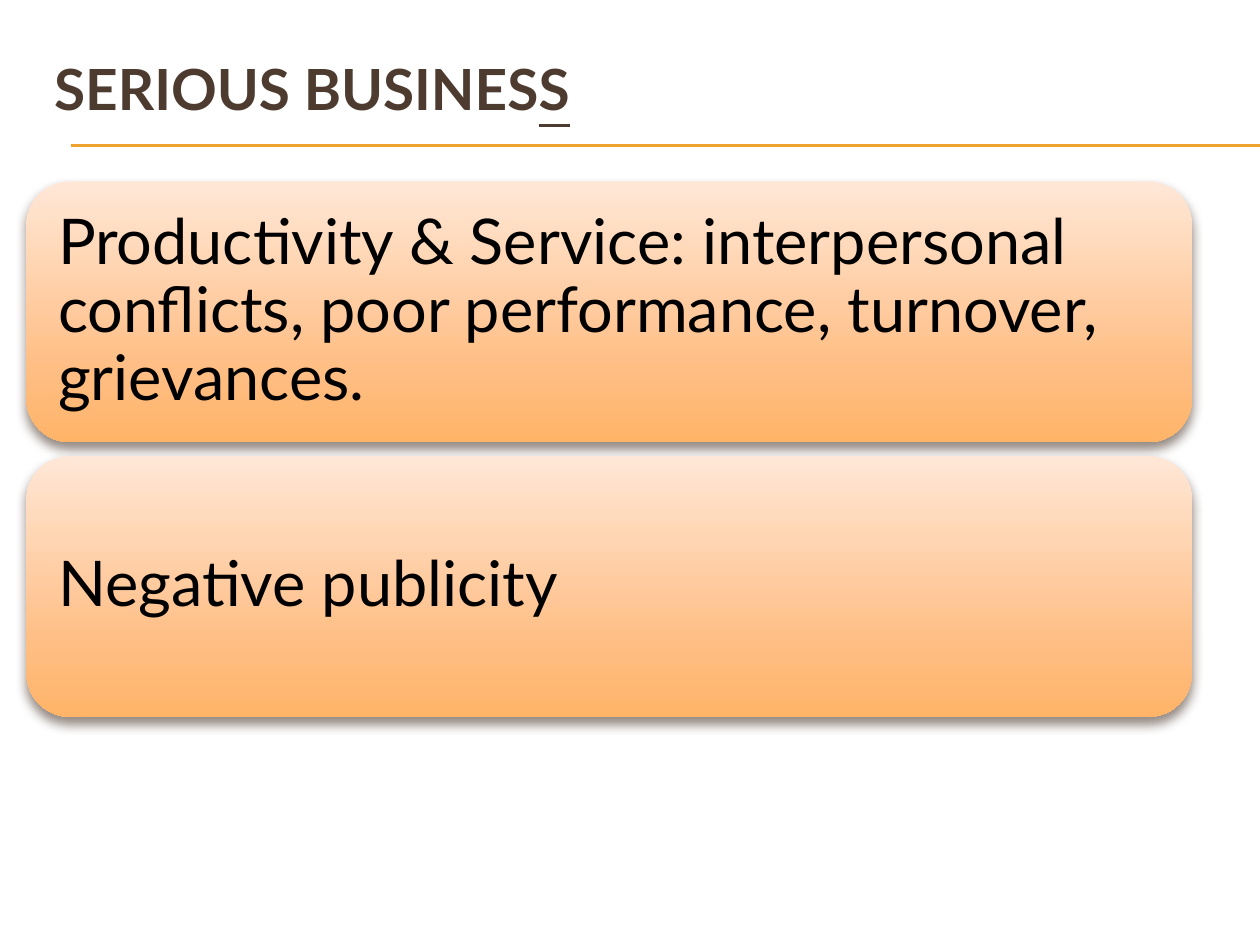
from lxml import etree
from pptx import Presentation
from pptx.dml.color import RGBColor
from pptx.enum.shapes import MSO_CONNECTOR, MSO_SHAPE
from pptx.enum.text import MSO_ANCHOR, MSO_AUTO_SIZE, PP_ALIGN
from pptx.oxml import parse_xml
from pptx.oxml.ns import nsdecls, qn
from pptx.util import Inches, Pt

FONT = "Lato"
COLORS = {"title": "4E3B30", "rule": "F0A22E", "body": "000000", "shadow": "4E3B30"}
CARD_GRADIENT = [(0, "FFE7D7"), (72, "FFBE84"), (100, "FFB468")]

TITLE_RUNS = [("SERIOUS BUSINES", False), ("S", True)]  # text, underlined
RULE_TOPS = [1.15, 1.16]
RULE_LEFT = 0.56
CARDS = [
    "Productivity & Service: interpersonal conflicts, poor performance, turnover, grievances.",
    "Negative publicity",
]
CARD_LEFT, CARD_TOP, CARD_WIDTH, CARD_HEIGHT = 0.21, 1.44, 9.25, 2.07
CARD_GAP = 0.11
SLIDE_WIDTH, SLIDE_HEIGHT = 10, 7.5


def style_font(font, size, color, bold=False):
    font.name = FONT
    font.size = Pt(size)
    font.bold = bold
    font.color.rgb = RGBColor.from_string(COLORS[color])


def add_title(slide):
    title = slide.shapes.title
    title.left, title.top = Inches(0.33), Inches(0.5)
    title.width, title.height = Inches(9.5), Inches(0.92)
    frame = title.text_frame
    frame.auto_size = MSO_AUTO_SIZE.NONE
    frame.vertical_anchor = MSO_ANCHOR.MIDDLE
    frame.margin_top, frame.margin_bottom = 0, Inches(0.52)  # lifts the text above the rules
    para = frame.paragraphs[0]
    para.alignment = PP_ALIGN.LEFT
    for text, underlined in TITLE_RUNS:
        span = para.add_run()
        span.text = text
        style_font(span.font, 32.4, "title", bold=True)
        span.font.underline = underlined


def add_rule(slide, top):
    rule = slide.shapes.add_connector(
        MSO_CONNECTOR.STRAIGHT, Inches(RULE_LEFT), Inches(top), Inches(SLIDE_WIDTH), Inches(top))
    rule.line.color.rgb = RGBColor.from_string(COLORS["rule"])
    rule.line.width = Pt(0.75)
    etree.SubElement(rule._element.spPr, qn("a:effectLst"))


def style_card(card):
    """Give the card its three-stop vertical gradient and soft shadow."""
    card.line.fill.background()
    stops = "".join(
        f'<a:gs pos="{position * 1000}"><a:srgbClr val="{color}"/></a:gs>'
        for position, color in CARD_GRADIENT)
    properties = card._element.spPr
    properties.find(qn("a:prstGeom")).addnext(parse_xml(
        f'<a:gradFill {nsdecls("a")} rotWithShape="1"><a:gsLst>{stops}</a:gsLst>'
        '<a:lin ang="5400000" scaled="0"/></a:gradFill>'))
    properties.append(parse_xml(
        f'<a:effectLst {nsdecls("a")}>'
        f'<a:outerShdw blurRad="{Pt(6)}" dist="{Pt(4)}" dir="5400000" rotWithShape="0">'
        f'<a:srgbClr val="{COLORS["shadow"]}"><a:alpha val="60000"/></a:srgbClr>'
        '</a:outerShdw></a:effectLst>'))


def add_card(slide, index, text):
    top = CARD_TOP + index * (CARD_HEIGHT + CARD_GAP)
    card = slide.shapes.add_shape(
        MSO_SHAPE.ROUNDED_RECTANGLE, Inches(CARD_LEFT), Inches(top),
        Inches(CARD_WIDTH), Inches(CARD_HEIGHT))
    style_card(card)
    frame = card.text_frame
    frame.word_wrap = True
    frame.vertical_anchor = MSO_ANCHOR.MIDDLE
    frame.margin_left = frame.margin_right = Inches(0.15)
    frame.margin_top = frame.margin_bottom = Inches(0.15)
    para = frame.paragraphs[0]
    para.text = text
    para.alignment = PP_ALIGN.LEFT
    para.line_spacing = 0.9
    style_font(para.runs[0].font, 36, "body")


def main():
    deck = Presentation()
    deck.slide_width, deck.slide_height = Inches(SLIDE_WIDTH), Inches(SLIDE_HEIGHT)
    slide = deck.slides.add_slide(deck.slide_layouts.get_by_name("Title Only"))
    for top in RULE_TOPS:
        add_rule(slide, top)
    add_title(slide)
    for index, text in enumerate(CARDS):
        add_card(slide, index, text)
    deck.save("out.pptx")


if __name__ == "__main__":
    main()
